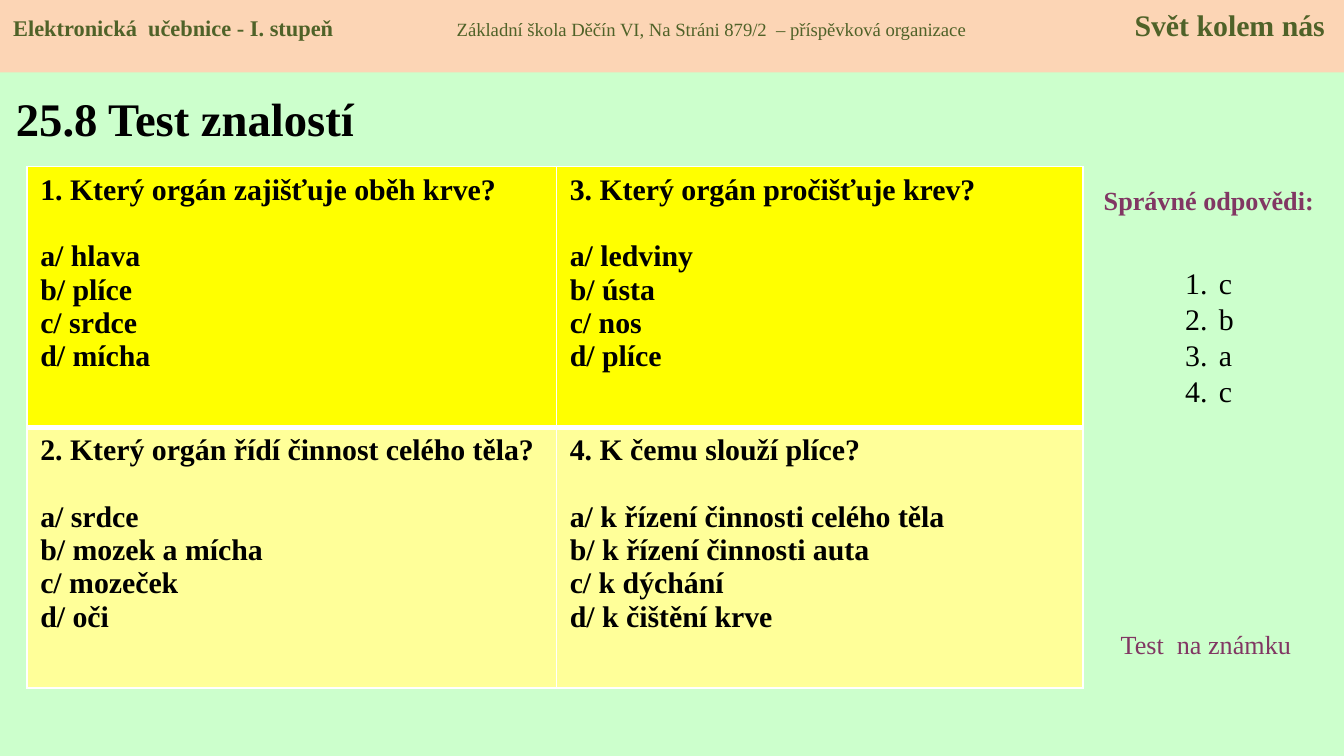
from dataclasses import dataclass

from lxml import etree
from pptx import Presentation
from pptx.dml.color import RGBColor
from pptx.enum.shapes import MSO_SHAPE
from pptx.enum.text import MSO_ANCHOR, PP_ALIGN
from pptx.oxml.ns import qn
from pptx.util import Inches, Pt

RECTANGLE = MSO_SHAPE.RECTANGLE
TOP, MIDDLE = MSO_ANCHOR.TOP, MSO_ANCHOR.MIDDLE
LEFT, CENTER = PP_ALIGN.LEFT, PP_ALIGN.CENTER


@dataclass(frozen=True)
class Theme:
    font: str = "Times New Roman"
    background: str = "CCFFCC"
    header_fill: str = "FCD5B5"
    header_text: str = "4F6228"
    accent: str = "813763"
    text: str = "000000"
    border: str = "FFFFFF"
    row_fills: tuple[str, ...] = ("FFFF00", "FFFF99")
    title_size: float = 25
    body_size: float = 16
    label_size: float = 14
    school_book_size: float = 12
    school_size: float = 10


@dataclass(frozen=True)
class Label:
    text: str
    box: tuple[float, float, float, float]
    size: float
    color: str
    bold: bool = False
    align: PP_ALIGN = LEFT
    anchor: MSO_ANCHOR = TOP


@dataclass(frozen=True)
class Question:
    heading: str
    options: tuple[str, ...]


THEME = Theme()
LABELS = (
    Label("25.8 Test znalostí", (0.02, 0.55, 3.19, 0.65), THEME.title_size,
          THEME.text, bold=True, anchor=MIDDLE),
    Label("Správné odpovědi:", (8.05, 1.32, 1.89, 0.34), THEME.label_size,
          THEME.accent, bold=True, align=CENTER),
    Label("Test  na známku", (8.24, 4.63, 1.57, 0.34), THEME.label_size, THEME.accent),
)
QUESTION_GRID = (
    (
        Question("1. Který orgán zajišťuje oběh krve?",
                 ("a/ hlava", "b/ plíce", "c/ srdce", "d/ mícha")),
        Question("3. Který orgán pročišťuje krev?",
                 ("a/ ledviny", "b/ ústa", "c/ nos", "d/ plíce")),
    ),
    (
        Question("2. Který orgán řídí činnost celého těla?",
                 ("a/ srdce", "b/ mozek a mícha", "c/ mozeček", "d/ oči")),
        Question("4. K čemu slouží plíce?",
                 ("a/ k řízení činnosti celého těla", "b/ k řízení činnosti auta",
                  "c/ k dýchání", "d/ k čištění krve")),
    ),
)
COLUMN_WIDTHS = (3.94, 3.92)
ROW_HEIGHT = 1.94
ANSWERS = ("c", "b", "a", "c")


def add_run(paragraph, text: str, size: float, color: str, bold: bool = False) -> None:
    run = paragraph.add_run()
    run.text = text
    run.font.name = THEME.font
    run.font.size = Pt(size)
    run.font.bold = bold
    run.font.color.rgb = RGBColor.from_string(color)


def next_paragraph(text_frame, index: int):
    """Return the frame's first paragraph for index 0, otherwise a new one."""
    return text_frame.add_paragraph() if index else text_frame.paragraphs[0]


def add_text_frame(slide, box: tuple[float, float, float, float]):
    text_frame = slide.shapes.add_textbox(*map(Inches, box)).text_frame
    text_frame.word_wrap = True
    return text_frame


def draw_label(slide, label: Label) -> None:
    text_frame = add_text_frame(slide, label.box)
    text_frame.vertical_anchor = label.anchor
    paragraph = text_frame.paragraphs[0]
    paragraph.alignment = label.align
    add_run(paragraph, label.text, label.size, label.color, label.bold)


def draw_header(slide) -> None:
    """Draw the top band, its three texts placed by tab stops."""
    band = slide.shapes.add_shape(RECTANGLE, 0, 0, Inches(10), Inches(0.54))
    band.shadow.inherit = False
    band.fill.solid()
    band.fill.fore_color.rgb = RGBColor.from_string(THEME.header_fill)
    band.line.fill.background()
    text_frame = band.text_frame
    text_frame.word_wrap = True
    text_frame.vertical_anchor = TOP
    paragraph = text_frame.paragraphs[0]
    paragraph.alignment = LEFT
    tab_list = etree.SubElement(paragraph._p.get_or_add_pPr(), qn("a:tabLst"))
    for position, alignment in ((3.3, "l"), (9.76, "r")):
        etree.SubElement(tab_list, qn("a:tab"), pos=str(Inches(position)), algn=alignment)
    add_run(paragraph, "Elektronická  učebnice - I. stupeň\t",
            THEME.school_book_size, THEME.header_text, bold=True)
    add_run(paragraph, "Základní škola Děčín VI, Na Stráni 879/2  – příspěvková organizace\t",
            THEME.school_size, THEME.header_text)
    add_run(paragraph, "Svět kolem nás", THEME.body_size, THEME.header_text, bold=True)


def set_borders(cell, top: float, bottom: float) -> None:
    properties = cell._tc.get_or_add_tcPr()
    for side, width in (("L", 1), ("R", 1), ("T", top), ("B", bottom)):
        line = etree.SubElement(properties, qn(f"a:ln{side}"), w=str(Pt(width)))
        fill = etree.SubElement(line, qn("a:solidFill"))
        etree.SubElement(fill, qn("a:srgbClr"), val=THEME.border)


def fill_question(cell, question: Question) -> None:
    for index, text in enumerate((question.heading, *question.options)):
        paragraph = next_paragraph(cell.text_frame, index)
        add_run(paragraph, text, THEME.body_size, THEME.text, bold=True)
    cell.text_frame.paragraphs[0].space_after = Pt(18)


def draw_questions(slide) -> None:
    row_count = len(QUESTION_GRID)
    table = slide.shapes.add_table(
        row_count, len(COLUMN_WIDTHS), Inches(0.2), Inches(1.24),
        Inches(sum(COLUMN_WIDTHS)), Inches(ROW_HEIGHT * row_count)).table
    for column, width in zip(table.columns, COLUMN_WIDTHS):
        column.width = Inches(width)
    for row_index, questions in enumerate(QUESTION_GRID):
        table.rows[row_index].height = Inches(ROW_HEIGHT)
        for column_index, question in enumerate(questions):
            cell = table.cell(row_index, column_index)
            set_borders(cell, top=3 if row_index else 1, bottom=1 if row_index else 3)
            cell.fill.solid()
            cell.fill.fore_color.rgb = RGBColor.from_string(THEME.row_fills[row_index])
            fill_question(cell, question)


def draw_answers(slide) -> None:
    text_frame = add_text_frame(slide, (8.72, 1.65, 0.55, 1.99))
    text_frame.margin_top = Inches(0.32)
    for index, answer in enumerate(ANSWERS):
        paragraph = next_paragraph(text_frame, index)
        properties = paragraph._p.get_or_add_pPr()
        properties.set("marL", str(Inches(0.25)))
        properties.set("indent", str(Inches(-0.25)))
        etree.SubElement(properties, qn("a:buFont"), typeface=THEME.font)
        etree.SubElement(properties, qn("a:buAutoNum"), type="arabicPeriod")
        add_run(paragraph, answer, THEME.body_size, THEME.text)


def main() -> None:
    presentation = Presentation()
    presentation.slide_width = Inches(10)
    presentation.slide_height = Inches(10 * 9 / 16)
    slide = presentation.slides.add_slide(presentation.slide_layouts[6])
    slide.background.fill.solid()
    slide.background.fill.fore_color.rgb = RGBColor.from_string(THEME.background)
    draw_header(slide)
    draw_questions(slide)
    draw_answers(slide)
    for label in LABELS:
        draw_label(slide, label)
    presentation.save("out.pptx")


if __name__ == "__main__":
    main()
